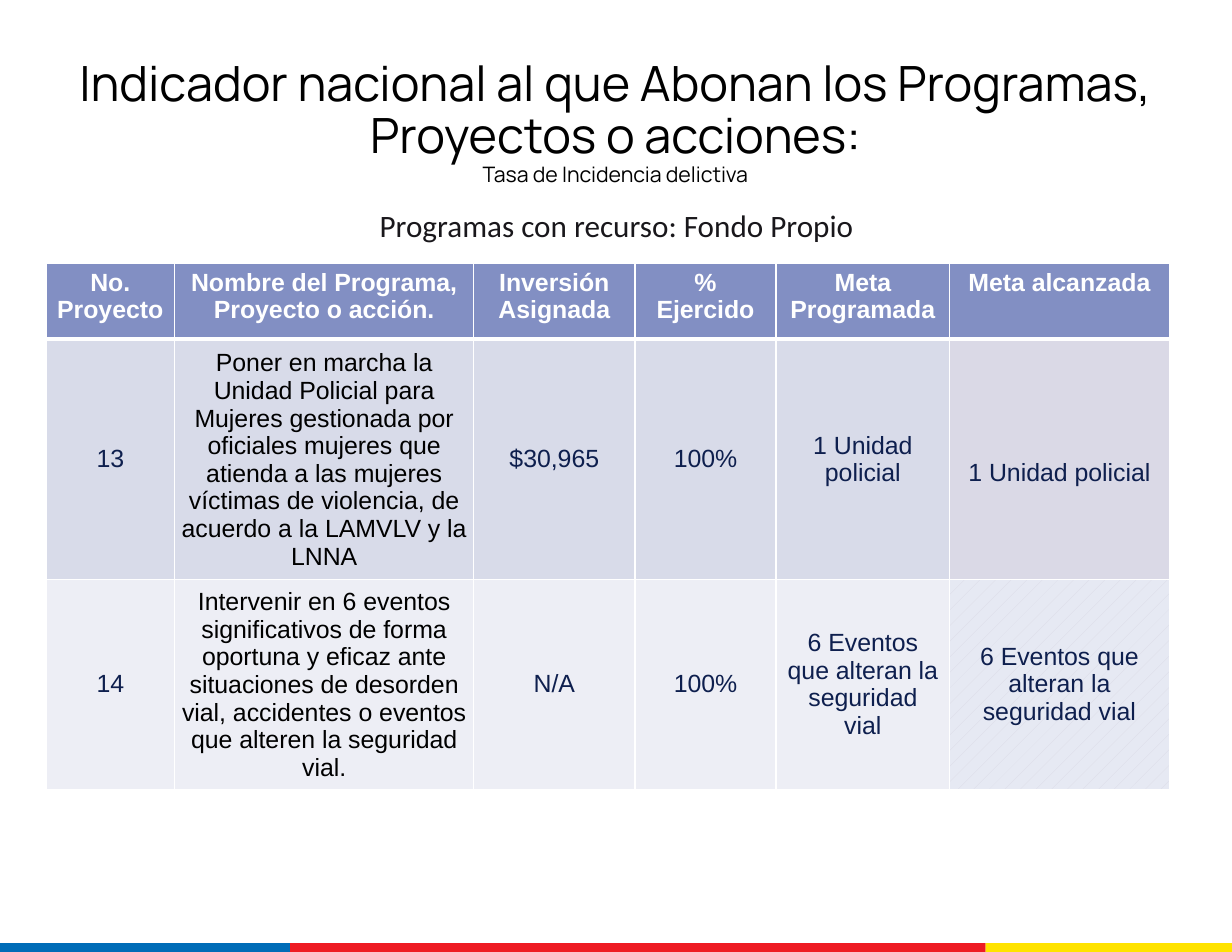
from copy import deepcopy

from lxml import etree
from pptx import Presentation
from pptx.dml.color import RGBColor
from pptx.enum import dml, shapes, text
from pptx.oxml.ns import qn
from pptx.util import Inches, Pt

COLORS = {
    "white": "FFFFFF", "black": "000000", "ink": "19171B", "navy": "0E1F4E",
    "header": "828FC3", "row": "D8DBE9", "row_alt": "EDEEF5",
    "reached": "DAD9E6", "reached_alt": "E6E9F3",
    "blue": "006CB7", "red": "EE1B23", "yellow": "FFE300",
}
COLUMN_WIDTHS = [1.15, 2.67, 1.44, 1.26, 1.55, 1.96]
ROW_HEIGHTS = [0.68, 1.98, 1.73]
ROWS = [
    ["No. Proyecto", "Nombre del Programa, Proyecto o acción.", "Inversión Asignada",
     "% Ejercido", "Meta Programada", "Meta alcanzada"],
    ["13", "Poner en marcha la Unidad Policial para Mujeres gestionada por oficiales "
     "mujeres que atienda a las mujeres víctimas de violencia, de acuerdo a la LAMVLV "
     "y la LNNA", "$30,965", "100%", "1 Unidad policial", "1 Unidad policial"],
    ["14", "Intervenir en 6 eventos significativos de forma oportuna y eficaz ante "
     "situaciones de desorden vial, accidentes o eventos que alteren la seguridad vial.",
     "N/A", "100%", "6 Eventos que alteran la seguridad vial",
     "6 Eventos que alteran la seguridad vial"],
]
NAME_COLUMN, REACHED_COLUMN = 1, 5


def color(name):
    return RGBColor.from_string(COLORS[name])


def format_run(run, font, size, color_name, bold=False):
    run.font.name = font
    run.font.size = Pt(size)
    run.font.bold = bold
    run.font.color.rgb = color(color_name)


def place(shape, left, top, width, height):
    shape.left, shape.top = Inches(left), Inches(top)
    shape.width, shape.height = Inches(width), Inches(height)


def add_title(slide, left, top, width, height):
    title = slide.shapes.title
    place(title, left, top, width, height)
    frame = title.text_frame
    frame.text = ("Indicador nacional al que Abonan los Programas, Proyectos o acciones:"
                  "\vTasa de Incidencia delictiva")
    frame.auto_size = text.MSO_AUTO_SIZE.NONE
    frame.vertical_anchor = text.MSO_ANCHOR.MIDDLE
    paragraph = frame.paragraphs[0]
    paragraph.alignment = text.PP_ALIGN.CENTER
    paragraph.line_spacing = 0.9
    for run, size in zip(paragraph.runs, (31.2, 13.7)):
        format_run(run, "Manrope", size, "black")
    # The line break takes the size of the heading before it
    line_break = paragraph._p.find(qn("a:br"))
    line_break.append(deepcopy(paragraph.runs[0]._r.find(qn("a:rPr"))))


def add_subtitle(slide, left, top, width, height):
    box = slide.shapes.add_textbox(Inches(left), Inches(top), Inches(width), Inches(height))
    frame = box.text_frame
    frame.word_wrap = True
    frame.vertical_anchor = text.MSO_ANCHOR.MIDDLE
    frame.text = "Programas con recurso: Fondo Propio"
    frame.paragraphs[0].alignment = text.PP_ALIGN.CENTER
    format_run(frame.paragraphs[0].runs[0], "Calibri", 20, "ink")


def set_borders(cell, top, bottom):
    properties = cell._tc.get_or_add_tcPr()
    for side, width in (("L", 1), ("R", 1), ("T", top), ("B", bottom)):
        line = etree.SubElement(properties, qn(f"a:ln{side}"), w=str(Pt(width)))
        fill = etree.SubElement(line, qn("a:solidFill"))
        etree.SubElement(fill, qn("a:srgbClr"), val=COLORS["white"])


def fill_cell(cell, row, column):
    if (row, column) == (2, REACHED_COLUMN):
        cell.fill.patterned()
        cell.fill.pattern = dml.MSO_PATTERN.PERCENT_5
        cell.fill.fore_color.rgb = color("reached")
        cell.fill.back_color.rgb = color("reached_alt")
        return
    cell.fill.solid()
    name = ("header", "row", "row_alt")[row]
    if (row, column) == (1, REACHED_COLUMN):
        name = "reached"
    cell.fill.fore_color.rgb = color(name)


def format_cell(cell, row, column):
    is_header = row == 0
    is_name = not is_header and column == NAME_COLUMN
    set_borders(cell, top=3 if row == 1 else 1, bottom=3 if is_header else 1)
    fill_cell(cell, row, column)
    cell.vertical_anchor = text.MSO_ANCHOR.TOP if is_header else text.MSO_ANCHOR.MIDDLE
    if is_name:
        cell.margin_left = cell.margin_right = cell.margin_top = Inches(0.01)
        cell.margin_bottom = 0
    elif (row, column) == (1, REACHED_COLUMN):
        cell.margin_top = Inches(0.3)
    paragraph = cell.text_frame.paragraphs[0]
    paragraph.alignment = text.PP_ALIGN.CENTER
    ink = "white" if is_header else "black" if is_name else "navy"
    format_run(paragraph.runs[0], "Arial", 16, ink, bold=is_header)


def add_program_table(slide, left, top):
    frame = slide.shapes.add_table(
        len(ROWS), len(COLUMN_WIDTHS), Inches(left), Inches(top),
        Inches(sum(COLUMN_WIDTHS)), Inches(sum(ROW_HEIGHTS)))
    table = frame.table
    table.horz_banding = False
    for column, width in zip(table.columns, COLUMN_WIDTHS):
        column.width = Inches(width)
    for row, height in zip(table.rows, ROW_HEIGHTS):
        row.height = Inches(height)
    for row, values in enumerate(ROWS):
        for column, value in enumerate(values):
            cell = table.cell(row, column)
            cell.text_frame.text = value
            format_cell(cell, row, column)


def add_footer_stripe(slide, left, top, height):
    for name, width in (("blue", 2.59), ("red", 6.21), ("yellow", 2.2)):
        stripe = slide.shapes.add_shape(
            shapes.MSO_SHAPE.RECTANGLE, Inches(left), Inches(top),
            Inches(width), Inches(height))
        stripe.shadow.inherit = False
        stripe.fill.solid()
        stripe.fill.fore_color.rgb = color(name)
        stripe.line.fill.background()
        left += width


def main():
    presentation = Presentation()
    presentation.slide_width, presentation.slide_height = Inches(11), Inches(8.5)
    slide = presentation.slides.add_slide(presentation.slide_layouts[5])
    add_footer_stripe(slide, 0, 8.42, 0.08)
    add_title(slide, 0.53, 0.39, 9.93, 1.42)
    add_subtitle(slide, 0.63, 1.73, 9.75, 0.55)
    add_program_table(slide, 0.41, 2.35)
    presentation.save("out.pptx")


if __name__ == "__main__":
    main()
